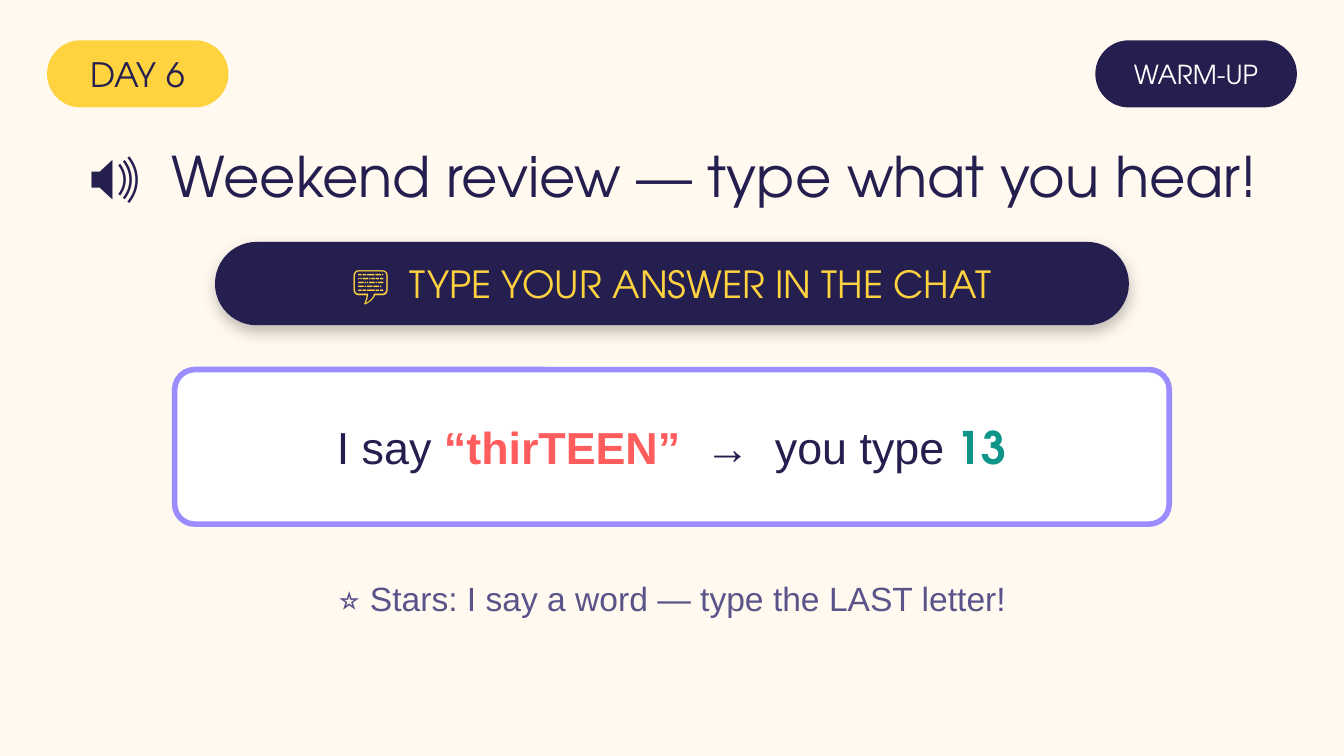
from dataclasses import dataclass
from typing import Optional

from lxml.etree import SubElement
from pptx import Presentation
from pptx.dml.color import RGBColor
from pptx.enum.shapes import MSO_SHAPE
from pptx.enum.text import MSO_ANCHOR, PP_ALIGN
from pptx.oxml.ns import qn
from pptx.util import Inches, Pt

CREAM = RGBColor(0xFF, 0xF9, 0xEF)
NAVY = RGBColor(0x24, 0x1F, 0x4E)
YELLOW = RGBColor(0xFF, 0xD2, 0x3F)
WHITE = RGBColor(0xFF, 0xFF, 0xFF)
LILAC = RGBColor(0x9B, 0x8C, 0xFF)
CORAL = RGBColor(0xFF, 0x5D, 0x5D)
TEAL = RGBColor(0x0E, 0x94, 0x88)
MUTED = RGBColor(0x5A, 0x54, 0x8A)

DISPLAY = "TeX Gyre Adventor"
BODY = "Arial"


@dataclass
class Run:
    text: str
    size: int
    color: RGBColor
    font: str = DISPLAY
    bold: bool = False


@dataclass
class Block:
    left: float
    top: float
    width: float
    height: float
    runs: list[Run]
    fill: Optional[RGBColor] = None
    line: Optional[RGBColor] = None
    radius: float = 0.5
    shadow: bool = False


def write_text(sp, runs: list[Run]) -> None:
    tf = sp.text_frame
    frame_format = {"word_wrap": True, "vertical_anchor": MSO_ANCHOR.MIDDLE,
                    "margin_left": 0, "margin_right": 0,
                    "margin_top": 0, "margin_bottom": 0}
    for name, value in frame_format.items():
        setattr(tf, name, value)
    p = tf.paragraphs[0]
    p.alignment = PP_ALIGN.CENTER
    for run in runs:
        r = p.add_run()
        r.text = run.text
        font_format = {"name": run.font, "size": Pt(run.size), "bold": run.bold}
        for name, value in font_format.items():
            setattr(r.font, name, value)
        r.font.color.rgb = run.color


def add_soft_shadow(sp) -> None:
    effects = sp._element.spPr.find(qn("a:effectLst"))
    shadow = SubElement(effects, qn("a:outerShdw"), blurRad=str(Pt(8)),
                        dist=str(Pt(3)), dir="5400000", rotWithShape="0")
    color = SubElement(shadow, qn("a:srgbClr"), val="000000")
    SubElement(color, qn("a:alpha"), val="25000")


def add_block(s, block: Block) -> None:
    box = [Inches(v) for v in (block.left, block.top, block.width, block.height)]
    if block.fill is None:
        sp = s.shapes.add_textbox(*box)
    else:
        sp = s.shapes.add_shape(MSO_SHAPE.ROUNDED_RECTANGLE, *box)
        sp.adjustments[0] = block.radius
        sp.shadow.inherit = False
        sp.fill.solid()
        sp.fill.fore_color.rgb = block.fill
        if block.line is None:
            sp.line.fill.background()
        else:
            sp.line.color.rgb = block.line
            sp.line.width = Pt(3)
        if block.shadow:
            add_soft_shadow(sp)
    write_text(sp, block.runs)


BLOCKS = [
    # Header pills
    Block(0.35, 0.3, 1.35, 0.5, [Run("DAY 6", 18, NAVY)], fill=YELLOW),
    Block(8.15, 0.3, 1.5, 0.5, [Run("WARM-UP", 14, WHITE)], fill=NAVY),
    # Title
    Block(0, 0.95, 10, 0.7, [Run("🔊  Weekend review — type what you hear!", 30, NAVY)]),
    # Chat banner
    Block(1.6, 1.8, 6.8, 0.62, [Run("💬  TYPE YOUR ANSWER IN THE CHAT", 20, YELLOW)],
          fill=NAVY, shadow=True),
    # Example card
    Block(1.3, 2.75, 7.4, 1.15, [
        Run("I say ", 24, NAVY, BODY),
        Run("“thirTEEN”", 24, CORAL, BODY, True),
        Run("  →  you type ", 24, NAVY, BODY),
        Run("13", 24, TEAL, bold=True),
    ], fill=WHITE, line=LILAC, radius=0.13),
    # Extra challenge
    Block(0, 4.2, 10, 0.5,
          [Run("⭐ Stars: I say a word — type the LAST letter!", 18, MUTED, BODY)]),
]


def main() -> None:
    prs = Presentation()
    prs.slide_width = Inches(10)
    prs.slide_height = Inches(10) * 9 // 16
    s = prs.slides.add_slide(prs.slide_layouts[6])
    s.background.fill.solid()
    s.background.fill.fore_color.rgb = CREAM
    for block in BLOCKS:
        add_block(s, block)
    prs.save("out.pptx")


if __name__ == "__main__":
    main()
